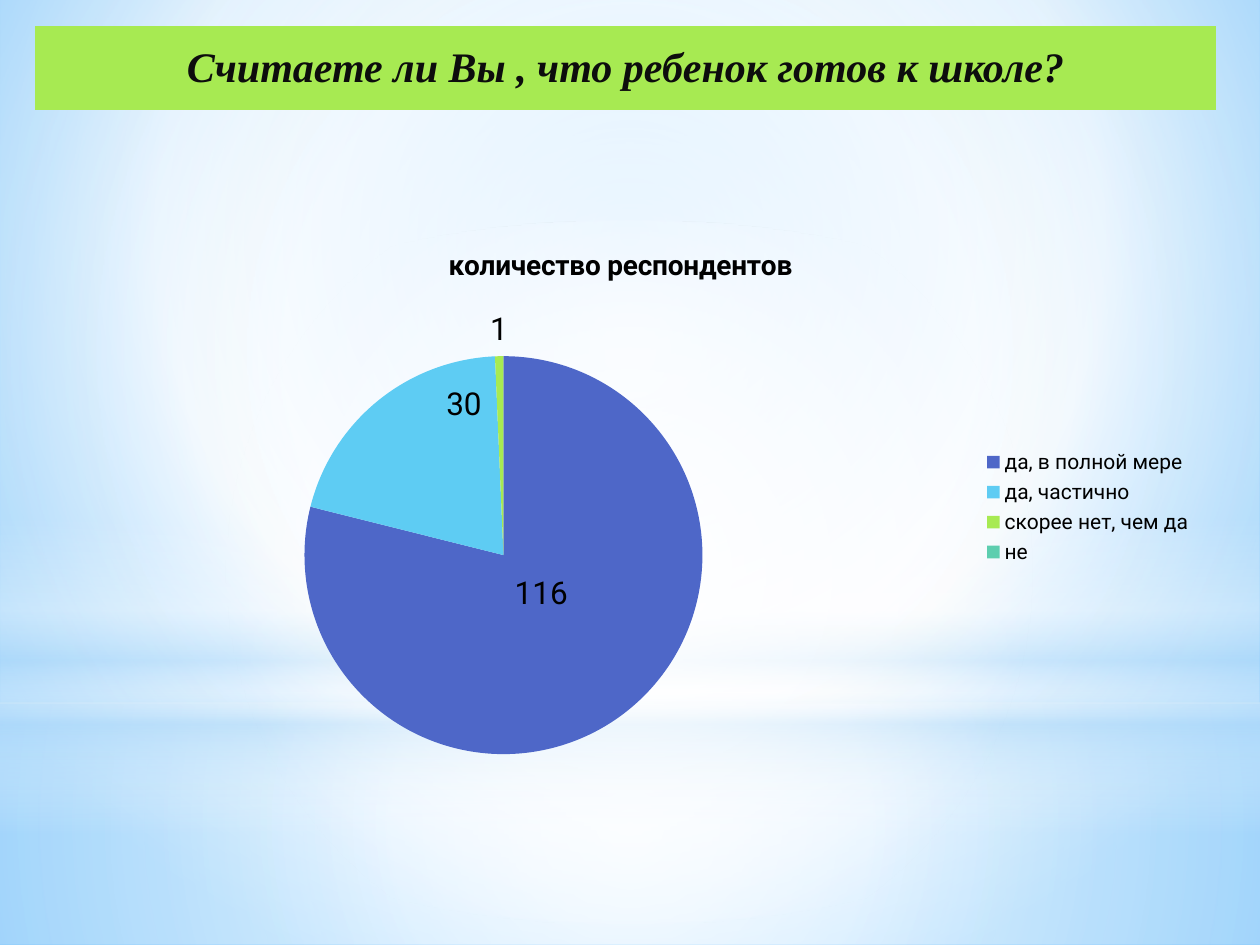
from lxml.etree import SubElement
from pptx import Presentation
from pptx.chart.data import CategoryChartData
from pptx.dml.color import RGBColor
from pptx.enum.chart import XL_CHART_TYPE as ChartType
from pptx.enum.chart import XL_LABEL_POSITION as LabelPos
from pptx.enum.chart import XL_LEGEND_POSITION as LegendPos
from pptx.enum.shapes import MSO_SHAPE as Shape
from pptx.enum.text import MSO_ANCHOR as Anchor
from pptx.enum.text import PP_ALIGN as Align
from pptx.oxml.ns import qn
from pptx.util import Inches, Pt

NO_GRID_STYLE = "{2D5ABB26-0587-4C30-8999-92F81FD0307C}"
CENTRE = (50, 50, 50, 50)


def color(hex_string):
    return RGBColor.from_string(hex_string)


def style_font(font, size, name, hex_color="000000", bold=False, italic=False):
    font.size, font.name = Pt(size), name
    font.bold, font.italic = bold, italic
    font.color.rgb = color(hex_color)


def write(frame, text, align=Align.CENTER, **font_format):
    paragraph = frame.paragraphs[0]
    paragraph.alignment = align
    run = paragraph.add_run()
    run.text = text
    style_font(run.font, **font_format)


def set_gradient(element, stops, focus=None):
    """Swap the solid fill for (position, colour, opacity) stops, circular if focus is given."""
    solid = element.xpath(".//a:solidFill")[0]
    gradient = SubElement(solid.getparent(), qn("a:gradFill"), rotWithShape="1")
    solid.getparent().replace(solid, gradient)
    stop_list = SubElement(gradient, qn("a:gsLst"))
    for position, hex_color, opacity in stops:
        stop = SubElement(stop_list, qn("a:gs"), pos=str(position * 1000))
        rgb = SubElement(stop, qn("a:srgbClr"), val=hex_color)
        if opacity < 100:
            SubElement(rgb, qn("a:alpha"), val=str(opacity * 1000))
    if focus is None:
        SubElement(gradient, qn("a:lin"), ang="5400000", scaled="0")
        return
    circle = SubElement(gradient, qn("a:path"), path="circle")
    SubElement(circle, qn("a:fillToRect"),
               {side: str(value * 1000) for side, value in zip("ltrb", focus)})


def set_layout(parent, index, inner=False, **fractions):
    """Place a chart part by fractions of the chart's size."""
    for old in parent.findall(qn("c:layout")):
        parent.remove(old)
    layout = SubElement(parent, qn("c:layout"))
    parent.insert(index, layout)
    manual = SubElement(layout, qn("c:manualLayout"))
    if inner:
        SubElement(manual, qn("c:layoutTarget"), val="inner")
        for mode in ("xMode", "yMode"):
            SubElement(manual, qn(f"c:{mode}"), val="edge")
    for key, value in fractions.items():
        SubElement(manual, qn(f"c:{key}"), val=str(value))


class SurveySlide:
    heading_font = "Times New Roman"
    chart_font = "Roboto"
    palette = ("4E67C8", "5ECCF3", "A7EA52", "5DCEAF")

    def __init__(self, presentation):
        self.slide = presentation.slides.add_slide(presentation.slide_layouts[6])
        self.shapes = self.slide.shapes

    def background(self, stops, focus):
        self.slide.background.fill.solid()
        set_gradient(self.slide.element, stops, focus)

    def glow(self, kind, top, height, stops, focus=None):
        """Add a full-width translucent shape."""
        band = self.shapes.add_shape(kind, 0, Inches(top), Inches(10), Inches(height))
        band.shadow.inherit = False
        band.line.fill.background()
        band.fill.solid()
        set_gradient(band.element, stops, focus)

    def banner(self, text, left, top, width, height):
        frame = self.shapes.add_table(1, 1, Inches(left), Inches(top),
                                      Inches(width), Inches(height))
        frame.element.xpath(".//a:tableStyleId")[0].text = NO_GRID_STYLE
        cell = frame.table.cell(0, 0)
        cell.fill.solid()
        cell.fill.fore_color.rgb = color(self.palette[2])
        cell.vertical_anchor = Anchor.MIDDLE
        cell.margin_left = cell.margin_right = cell.margin_top = Inches(0.01)
        cell.margin_bottom = 0
        write(cell.text_frame, text, size=24, name=self.heading_font,
              hex_color="0D0D0D", bold=True, italic=True)

    def pie(self, title, answers, left, top, width, height):
        data = CategoryChartData()
        data.categories = answers.keys()
        data.add_series(title, answers.values())
        chart = self.shapes.add_chart(ChartType.PIE, Inches(left), Inches(top),
                                      Inches(width), Inches(height), data).chart
        style_font(chart.font, 18, self.chart_font)
        chart.has_title = True
        write(chart.chart_title.text_frame, title, size=16, name=self.chart_font, bold=True)
        chart.has_legend = True
        chart.legend.position = LegendPos.RIGHT
        chart.legend.include_in_layout = False
        style_font(chart.legend.font, 12, self.chart_font)
        plot = chart.plots[0]
        plot.vary_by_categories = True
        series = plot.series[0]
        for index, hex_color in enumerate(self.palette):
            fill = series.points[index].format.fill
            fill.solid()
            fill.fore_color.rgb = color(hex_color)
        labels = series.data_labels
        labels.show_value = True
        labels.number_format = "0;;"  # hides the zero
        labels.number_format_is_linked = False
        labels.position = LabelPos.OUTSIDE_END
        style_font(labels.font, 18, self.chart_font)
        for index, (x, y) in enumerate([(-0.02, -0.07), (0.02, -0.13)]):
            label = series.points[index].data_label
            style_font(label.font, 18, self.chart_font)
            label.position = LabelPos.CENTER
            label_xml = labels._element.xpath(f"c:dLbl[c:idx/@val='{index}']")[0]
            set_layout(label_xml, 1, x=x, y=y)
        plot_area = chart.element.xpath(".//c:plotArea")[0]
        set_layout(plot_area, 0, inner=True, x=0.23, y=0.23, w=0.34, h=0.71)


def main():
    presentation = Presentation()
    presentation.slide_width, presentation.slide_height = Inches(10), Inches(7.5)
    survey = SurveySlide(presentation)
    survey.background([(0, "9ED5FF", 100), (60, "FFFFFF", 100), (100, "5BB9FF", 100)],
                      (20, 10, 20, 60))
    survey.glow(Shape.RECTANGLE, 5.58, 1.92,
                [(0, "FFFFFF", 91), (37, "FFFFFF", 76), (100, "B4DCFA", 79)], CENTRE)
    survey.glow(Shape.RECTANGLE, 0, 5.58,
                [(0, "FFFFFF", 89), (48, "FFFFFF", 62), (100, "B4DCFA", 79)], CENTRE)
    survey.glow(Shape.RECTANGLE, 4.12, 2.5,
                [(0, "FFFFFF", 0), (29, "FFFFFF", 30), (45, "B4DCFA", 40),
                 (55, "FFFFFF", 26), (65, "B4DCFA", 60), (100, "FFFFFF", 0)])
    survey.glow(Shape.OVAL, 1.75, 5.58, [(0, "FFFFFF", 100), (56, "FFFFFF", 0)], CENTRE)
    survey.banner("Считаете ли Вы , что ребенок готов к школе?", 0.28, 0.21, 9.37, 0.66)
    survey.pie("количество респондентов",
               {"да, в полной мере": 116, "да, частично": 30,
                "скорее нет, чем да": 1, "не": 0},
               0.28, 1.78, 9.29, 4.49)
    presentation.save("out.pptx")


if __name__ == "__main__":
    main()
